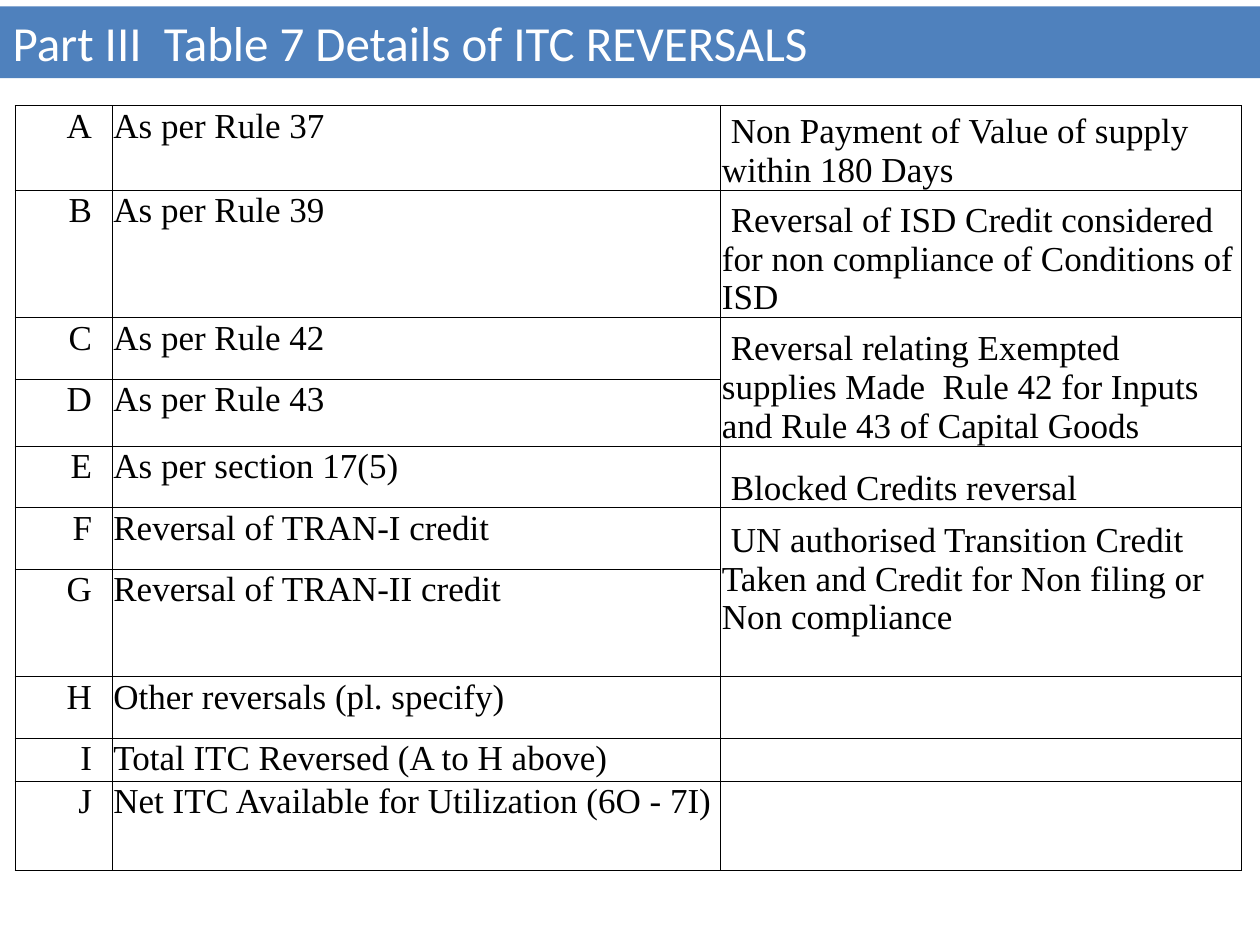
import pptx
import pptx.dml.color
import pptx.enum.text
import pptx.oxml.ns
import pptx.util
from lxml import etree

COLOURS = {"banner": "4F81BD", "paper": "FFFFFF", "ink": "000000"}
ALIGN = pptx.enum.text.PP_ALIGN
ANCHOR = pptx.enum.text.MSO_ANCHOR
COLUMNS = [0.77, 4.83, 4.13]
ROWS = [
    (0.67, "As per Rule 37", "Non Payment of Value of supply within 180 Days"),
    (1.01, "As per Rule 39",
     "Reversal of ISD Credit considered for non compliance of Conditions of ISD"),
    (0.49, "As per Rule 42",
     "Reversal relating Exempted supplies Made  Rule 42 for Inputs and Rule 43 of Capital Goods"),
    (0.53, "As per Rule 43", ""),
    (0.49, "As per section 17(5)", "Blocked Credits reversal"),
    (0.49, "Reversal of TRAN-I credit",
     "UN authorised Transition Credit Taken and Credit for Non filing or Non compliance"),
    (0.85, "Reversal of TRAN-II credit", ""),
    (0.49, "Other reversals (pl. specify)", ""),
    (0.34, "Total ITC Reversed (A to H above)", ""),
    (0.71, "Net ITC Available for Utilization (6O - 7I)", ""),
]
MERGED_STARTS = (2, 5)
TRANSITION_ROW = 5


def colour(name):
    return pptx.dml.color.RGBColor.from_string(COLOURS[name])


def write(frame, text, font="Times New Roman", size=20, ink="ink", align=ALIGN.LEFT, indent=0):
    para = frame.paragraphs[0]
    para.alignment = align
    if indent:
        properties = para._p.get_or_add_pPr()
        properties.set("marL", "0")
        properties.set("indent", str(pptx.util.Inches(indent)))
    span = para.add_run()
    span.text = text
    span.font.name = font
    span.font.size = pptx.util.Pt(size)
    span.font.color.rgb = colour(ink)


def add_banner(page, deck):
    box = page.shapes.title
    box.left, box.top = 0, pptx.util.Inches(0.05)
    box.width, box.height = deck.slide_width, pptx.util.Inches(0.57)
    box.fill.solid()
    box.fill.fore_color.rgb = colour("banner")
    box.text_frame.vertical_anchor = ANCHOR.MIDDLE
    box.text_frame.word_wrap = True
    write(box.text_frame, "Part III  Table 7 Details of ITC REVERSALS",
          font="Calibri", size=28, ink="paper")


def style_cell(cell, right=0.01, bottom=0, anchor=ANCHOR.TOP):
    cell.margin_left = cell.margin_top = pptx.util.Inches(0.01)
    cell.margin_right = pptx.util.Inches(right)
    cell.margin_bottom = pptx.util.Inches(bottom)
    cell.vertical_anchor = anchor
    properties = cell._tc.get_or_add_tcPr()
    for side in ("lnL", "lnR", "lnT", "lnB"):
        line = etree.SubElement(properties, pptx.oxml.ns.qn(f"a:{side}"), w=str(pptx.util.Pt(0.5)))
        fill = etree.SubElement(line, pptx.oxml.ns.qn("a:solidFill"))
        etree.SubElement(fill, pptx.oxml.ns.qn("a:srgbClr"), val=COLOURS["ink"])
    cell.fill.solid()
    cell.fill.fore_color.rgb = colour("paper")


def add_reversals(page):
    heights = [row[0] for row in ROWS]
    area = [pptx.util.Inches(n) for n in (0.12, 0.84, sum(COLUMNS), sum(heights))]
    table = page.shapes.add_table(len(ROWS), len(COLUMNS), *area).table
    table.first_row = table.horz_banding = False
    for column, width in zip(table.columns, COLUMNS):
        column.width = pptx.util.Inches(width)
    for index, (height, rule, reason) in enumerate(ROWS):
        table.rows[index].height = pptx.util.Inches(height)
        letter_cell, rule_cell, reason_cell = table.rows[index].cells
        style_cell(letter_cell, right=0.16)
        style_cell(rule_cell)
        style_cell(reason_cell, bottom=0.31 if index == TRANSITION_ROW else 0,
                   anchor=ANCHOR.BOTTOM)
        write(letter_cell.text_frame, "ABCDEFGHIJ"[index], align=ALIGN.RIGHT)
        write(rule_cell.text_frame, rule)
        if reason:
            write(reason_cell.text_frame, reason, indent=0.07)
    for start in MERGED_STARTS:
        table.cell(start, 2).merge(table.cell(start + 1, 2))


def main():
    deck = pptx.Presentation()
    deck.slide_width = pptx.util.Inches(10)
    deck.slide_height = pptx.util.Inches(7.5)
    page = deck.slides.add_slide(deck.slide_layouts[5])
    add_banner(page, deck)
    add_reversals(page)
    deck.save("out.pptx")


if __name__ == "__main__":
    main()
